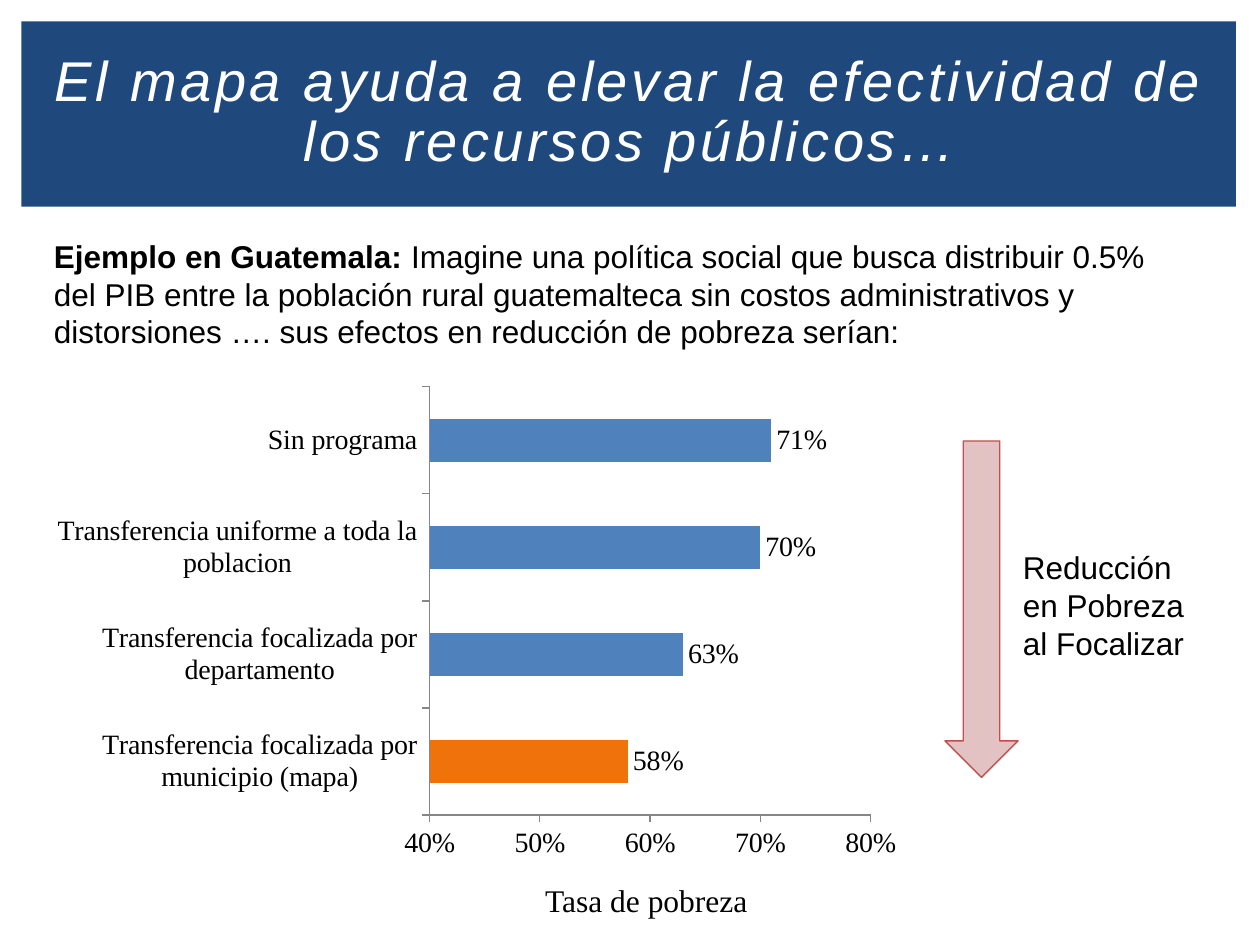
"""Build a slide on how targeting public transfers lowers poverty."""
from dataclasses import dataclass, field
from typing import Any

import pptx
import pptx.chart.data
import pptx.dml.color
import pptx.enum.chart
import pptx.enum.shapes
import pptx.enum.text
import pptx.oxml
import pptx.oxml.ns
import pptx.util

Inches, Pt = pptx.util.Inches, pptx.util.Pt
ALIGN = pptx.enum.text.PP_ALIGN
SHAPE = pptx.enum.shapes.MSO_SHAPE
TICK = pptx.enum.chart.XL_TICK_MARK

COLORS = {"banner": "1F497D", "white": "FFFFFF", "black": "000000", "bar": "4F81BD",
          "map_bar": "F0720A", "arrow": "E2C2C2", "arrow_line": "C0504D", "axis": "868686"}
SANS = {"name": "Arial", "size": Pt(18), "bold": False}
SERIF = {"name": "Times New Roman", "size": Pt(18), "bold": False}
POVERTY = {
    "Transferencia focalizada por municipio (mapa)": 0.58,
    "Transferencia focalizada por departamento": 0.63,
    "Transferencia uniforme a toda la poblacion": 0.70,
    "Sin programa": 0.71,
}


@dataclass
class Box:
    left: float
    top: float
    width: float
    height: float

    def place(self) -> tuple:
        return tuple(Inches(v) for v in (self.left, self.top, self.width, self.height))


@dataclass
class Note:
    box: Box
    runs: list[tuple[str, dict]]
    align: Any = field(default=ALIGN.LEFT)


NOTES = [
    Note(Box(0.33, 1.83, 9.17, 1.01), [
        ("Ejemplo en Guatemala: ", SANS | {"bold": True}),
        ("Imagine una política social que busca distribuir 0.5% del PIB entre la población "
         "rural guatemalteca sin costos administrativos y distorsiones …. sus efectos en "
         "reducción de pobreza serían:", SANS)]),
    Note(Box(3.67, 6.94, 2.92, 0.4), [("Tasa de pobreza", SERIF)], ALIGN.CENTER),
    Note(Box(8.02, 4.3, 1.67, 1.01), [("Reducción en Pobreza al Focalizar", SANS)]),
]


def rgb(key: str) -> pptx.dml.color.RGBColor:
    return pptx.dml.color.RGBColor.from_string(COLORS[key])


def apply(target: Any, values: dict) -> None:
    for name, value in values.items():
        setattr(target, name, value)


def set_font(font: Any, values: dict, color: str = "black") -> None:
    apply(font, values)
    font.color.rgb = rgb(color)


def add_shape(s: Any, kind: Any, box: Box, fill: str, line: str | None = None) -> Any:
    sp = s.shapes.add_shape(kind, *box.place())
    sp.shadow.inherit = False
    sp.fill.solid()
    sp.fill.fore_color.rgb = rgb(fill)
    if line:
        sp.line.color.rgb = rgb(line)
        sp.line.width = Pt(0.79)
    else:
        sp.line.fill.background()
    return sp


def add_title(s: Any, box: Box, text: str) -> None:
    sp = s.shapes.title
    apply(sp, dict(zip(("left", "top", "width", "height"), box.place())))
    tf = sp.text_frame
    apply(tf, {"word_wrap": True, "vertical_anchor": pptx.enum.text.MSO_ANCHOR.MIDDLE,
               "auto_size": pptx.enum.text.MSO_AUTO_SIZE.NONE})
    p = tf.paragraphs[0]
    apply(p, {"alignment": ALIGN.CENTER, "line_spacing": Pt(34)})
    r = p.add_run()
    r.text = text
    set_font(r.font, SANS | {"size": Pt(32), "italic": True}, "white")
    r.font._element.set("spc", "200")


def add_note(s: Any, note: Note) -> None:
    tf = s.shapes.add_textbox(*note.box.place()).text_frame
    tf.word_wrap = True
    p = tf.paragraphs[0]
    p.alignment = note.align
    for text, values in note.runs:
        r = p.add_run()
        r.text = text
        set_font(r.font, values)


def set_plot_area(chart: Any, plot: Box) -> None:
    area = chart._chartSpace.chart.plotArea
    for old in area.findall(pptx.oxml.ns.qn("c:layout")):
        area.remove(old)
    parts = {"x": plot.left, "y": plot.top, "w": plot.width, "h": plot.height}
    modes = '<c:xMode val="edge"/><c:yMode val="edge"/>'
    sizes = "".join(f'<c:{key} val="{value}"/>' for key, value in parts.items())
    area.insert(0, pptx.oxml.parse_xml(
        f'<c:layout {pptx.oxml.ns.nsdecls("c")}><c:manualLayout>'
        f'<c:layoutTarget val="inner"/>{modes}{sizes}</c:manualLayout></c:layout>'))


def add_poverty_chart(s: Any, box: Box) -> None:
    data = pptx.chart.data.CategoryChartData(number_format="0%")
    data.categories = list(POVERTY)
    data.add_series("Series 1", list(POVERTY.values()))
    kind = pptx.enum.chart.XL_CHART_TYPE.BAR_CLUSTERED
    chart = s.shapes.add_chart(kind, *box.place(), data).chart
    apply(chart, {"has_legend": False, "has_title": False})
    set_font(chart.font, SERIF | {"size": Pt(16)})
    set_plot_area(chart, Box(0.44, 0.04, 0.5, 0.85))
    for axis in (chart.category_axis, chart.value_axis):
        apply(axis, {"has_major_gridlines": False, "major_tick_mark": TICK.OUTSIDE,
                     "minor_tick_mark": TICK.NONE})
        axis.format.line.color.rgb = rgb("axis")
    apply(chart.value_axis, {"minimum_scale": 0.4, "maximum_scale": 0.8, "major_unit": 0.1})
    apply(chart.value_axis.tick_labels, {"number_format": "0%", "number_format_is_linked": False})
    plot = chart.plots[0]
    apply(plot, {"gap_width": 150, "vary_by_categories": False, "has_data_labels": True})
    apply(plot.data_labels, {"show_value": True, "number_format": "0%",
                             "number_format_is_linked": False,
                             "position": pptx.enum.chart.XL_LABEL_POSITION.OUTSIDE_END})
    series = plot.series[0]
    for target, color in ((series, "bar"), (series.points[0], "map_bar")):
        target.format.fill.solid()
        target.format.fill.fore_color.rgb = rgb(color)


def main() -> None:
    prs = pptx.Presentation()
    apply(prs, {"slide_width": Inches(10), "slide_height": Inches(7.5)})
    s = prs.slides.add_slide(prs.slide_layouts.get_by_name("Title Only"))
    banner = add_shape(s, SHAPE.RECTANGLE, Box(0.17, 0.17, 9.64, 1.47), "banner")
    s.shapes.title._element.addprevious(banner._element)
    add_title(s, Box(0.25, 0.25, 9.5, 1.29),
              "El mapa ayuda a elevar la efectividad de los recursos públicos…")
    add_poverty_chart(s, Box(0.33, 2.91, 7, 4))
    add_shape(s, SHAPE.DOWN_ARROW, Box(7.5, 3.5, 0.58, 2.67), "arrow", "arrow_line")
    for note in NOTES:
        add_note(s, note)
    prs.save("out.pptx")


if __name__ == "__main__":
    main()
